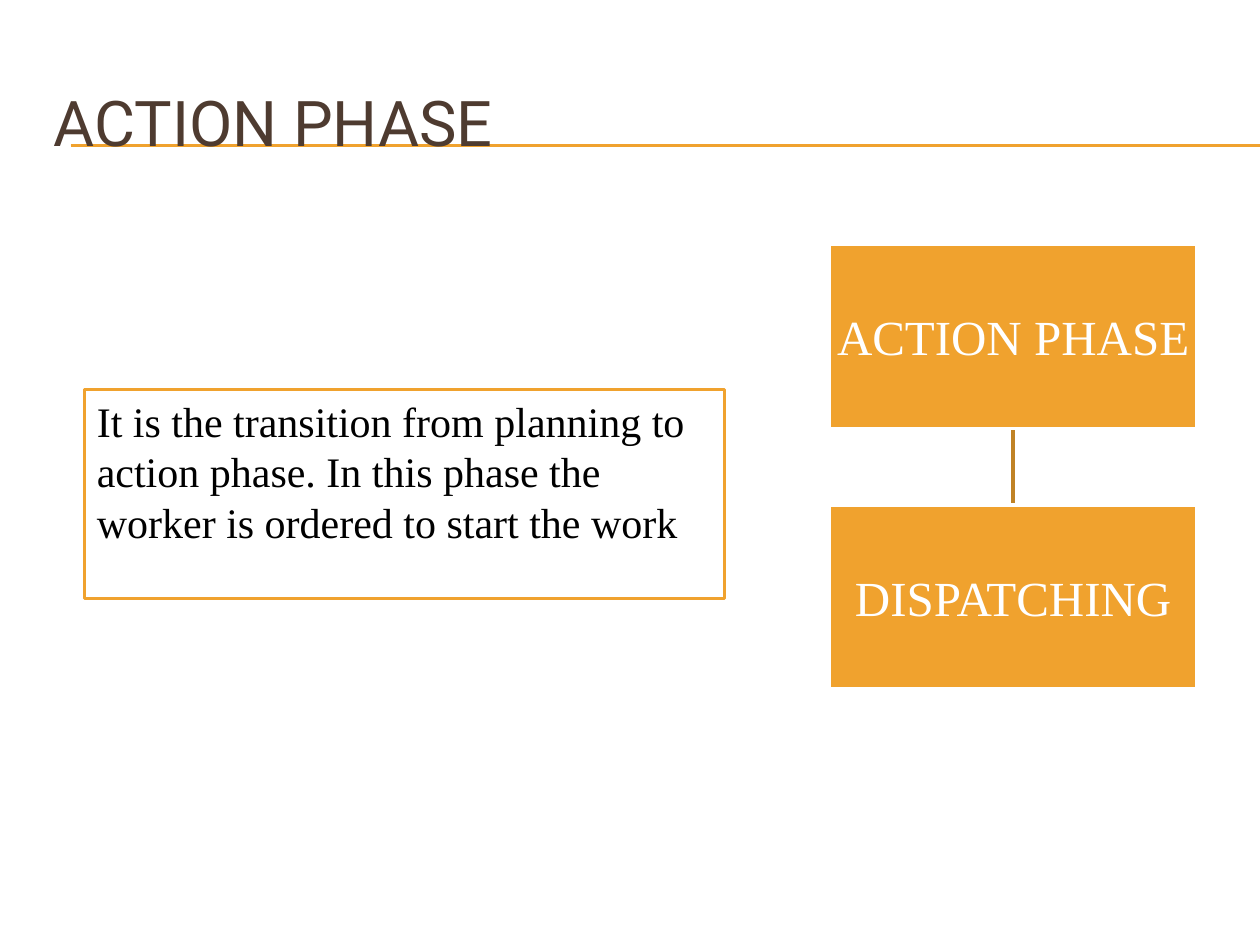
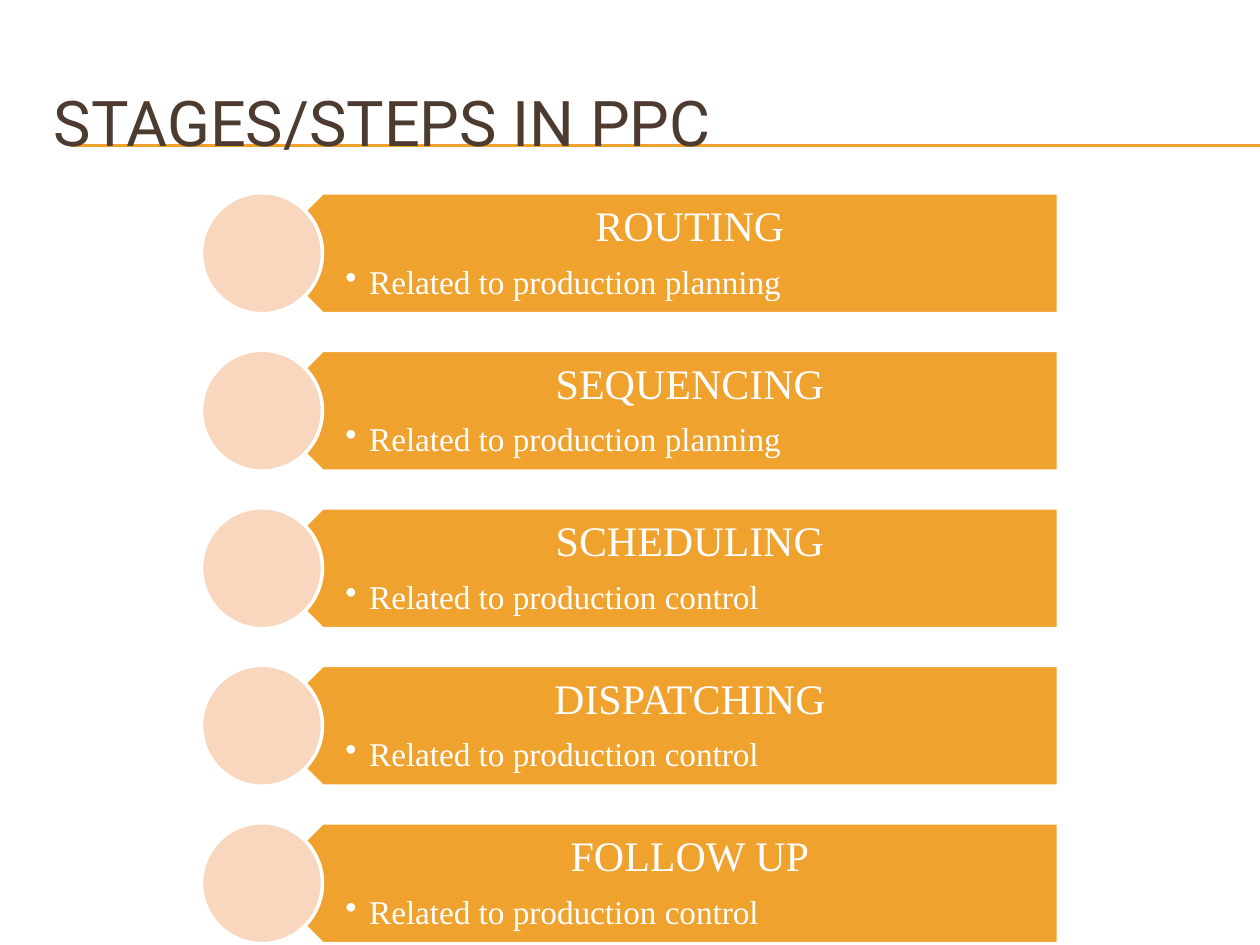
"""Build two slides on the action phase and the stages of PPC."""
from dataclasses import dataclass

import lxml.etree
import pptx
import pptx.dml.color
import pptx.enum.shapes
import pptx.enum.text
import pptx.oxml.ns
import pptx.util

Inches = pptx.util.Inches
Pt = pptx.util.Pt
Shape = pptx.enum.shapes.MSO_SHAPE
Align = pptx.enum.text.PP_ALIGN
Anchor = pptx.enum.text.MSO_ANCHOR


@dataclass(frozen=True)
class Theme:
    accent: str = "F0A22E"
    accent_dark: str = "C08225"
    circle: str = "F8D7BE"
    title: str = "4E3B30"
    white: str = "FFFFFF"
    black: str = "000000"
    title_font: str = "Roboto"
    body_font: str = "Times New Roman"
    title_size: int = 36
    box_size: int = 28
    body_size: int = 24
    detail_size: int = 19
    outline: float = 2
    rule: float = 0.75


THEME = Theme()
STAGES = [
    ("ROUTING", "planning"),
    ("SEQUENCING", "planning"),
    ("SCHEDULING", "control"),
    ("DISPATCHING", "control"),
    ("FOLLOW UP", "control"),
]


def rgb(color):
    return pptx.dml.color.RGBColor.from_string(color)


def format_paragraph(paragraph, size, color, align=Align.LEFT, font=THEME.body_font):
    paragraph.alignment = align
    for run in paragraph.runs:
        run.font.name = font
        run.font.size = Pt(size)
        run.font.color.rgb = rgb(color)


def set_frame(text_frame, anchor=Anchor.TOP, margins=(0.1, 0.05, 0.1, 0.05)):
    text_frame.word_wrap = True
    text_frame.vertical_anchor = anchor
    left, top, right, bottom = margins
    text_frame.margin_left = Inches(left)
    text_frame.margin_top = Inches(top)
    text_frame.margin_right = Inches(right)
    text_frame.margin_bottom = Inches(bottom)


def add_bullet(paragraph, indent):
    properties = paragraph._p.get_or_add_pPr()
    properties.set("marL", str(Inches(indent)))
    properties.set("indent", str(Inches(-indent)))
    bullet = lxml.etree.SubElement(properties, pptx.oxml.ns.qn("a:buChar"))
    bullet.set("char", "•")


def add_filled_shape(slide, kind, left, top, width, height, fill, line=THEME.white):
    shape = slide.shapes.add_shape(
        kind, Inches(left), Inches(top), Inches(width), Inches(height))
    shape.shadow.inherit = False
    shape.fill.solid()
    shape.fill.fore_color.rgb = rgb(fill)
    shape.line.color.rgb = rgb(line)
    shape.line.width = Pt(THEME.outline)
    return shape


def add_line(slide, start, end, color, width):
    line = slide.shapes.add_connector(
        pptx.enum.shapes.MSO_CONNECTOR.STRAIGHT, *map(Inches, start + end))
    line.line.color.rgb = rgb(color)
    line.line.width = Pt(width)
    lxml.etree.SubElement(line._element.spPr, pptx.oxml.ns.qn("a:effectLst"))
    return line


def add_text_box(slide, left, top, width, height):
    return slide.shapes.add_textbox(
        Inches(left), Inches(top), Inches(width), Inches(height)).text_frame


def add_titled_slide(presentation, title):
    slide = presentation.slides.add_slide(presentation.slide_layouts[6])
    for y in (1.15, 1.16):
        add_line(slide, (0.56, y), (10, y), THEME.accent, THEME.rule)
    text_frame = add_text_box(slide, 0.33, 0.5, 9.5, 0.92)
    set_frame(text_frame, Anchor.MIDDLE)
    text_frame.text = title
    format_paragraph(text_frame.paragraphs[0], THEME.title_size, THEME.title,
                     font=THEME.title_font)
    return slide


def add_phase_box(slide, top, label):
    box = add_filled_shape(slide, Shape.RECTANGLE, 6.58, top, 2.92, 1.46, THEME.accent)
    set_frame(box.text_frame, Anchor.MIDDLE, (0.02,) * 4)
    box.text_frame.text = label
    format_paragraph(box.text_frame.paragraphs[0], THEME.box_size, THEME.white, Align.CENTER)
    return box


def join_boxes(slide, upper, lower):
    """Join two stacked boxes with a line that lies behind them."""
    line = add_line(slide, (8.04, 3.4), (8.04, 4.01), THEME.accent_dark, THEME.outline)
    line.begin_connect(upper, 2)
    line.end_connect(lower, 0)
    upper._element.addprevious(line._element)


def add_description(slide, text):
    box = add_filled_shape(slide, Shape.RECTANGLE, 0.67, 3.09, 5.08, 1.66,
                           THEME.white, THEME.accent)
    set_frame(box.text_frame)
    box.text_frame.text = text
    format_paragraph(box.text_frame.paragraphs[0], THEME.body_size, THEME.black)


def add_stage(slide, top, name, relation):
    height = 0.96
    arrow = add_filled_shape(slide, Shape.PENTAGON, 2.08, top, 6.32, height, THEME.accent)
    arrow.rotation = 180
    text_frame = add_text_box(slide, 2.32, top, 6.08, height)
    set_frame(text_frame, margins=(0.42, 0.1, 0.19, 0.1))
    text_frame.text = name
    heading = text_frame.paragraphs[0]
    heading.line_spacing = 0.9
    heading.space_after = Pt(0.35 * THEME.body_size)
    format_paragraph(heading, THEME.body_size, THEME.white, Align.CENTER)
    detail = text_frame.add_paragraph()
    detail.text = f"Related to production {relation}"
    detail.line_spacing = 0.9
    add_bullet(detail, 0.19)
    format_paragraph(detail, THEME.detail_size, THEME.white)
    add_filled_shape(slide, Shape.OVAL, 1.6, top, height, height, THEME.circle)


def build_action_phase(presentation):
    slide = add_titled_slide(presentation, "ACTION PHASE")
    action = add_phase_box(slide, 1.94, "ACTION PHASE")
    dispatching = add_phase_box(slide, 4.01, "DISPATCHING")
    join_boxes(slide, action, dispatching)
    add_description(slide, "It is the transition from planning to action phase. "
                           "In this phase the worker is ordered to start the work")


def build_stages(presentation):
    slide = add_titled_slide(presentation, "STAGES/STEPS IN PPC")
    for index, (name, relation) in enumerate(STAGES):
        add_stage(slide, 1.53 + 1.25 * index, name, relation)


def main():
    presentation = pptx.Presentation()
    presentation.slide_width = Inches(10)
    presentation.slide_height = Inches(7.5)
    build_action_phase(presentation)
    build_stages(presentation)
    presentation.save("out.pptx")


if __name__ == "__main__":
    main()
